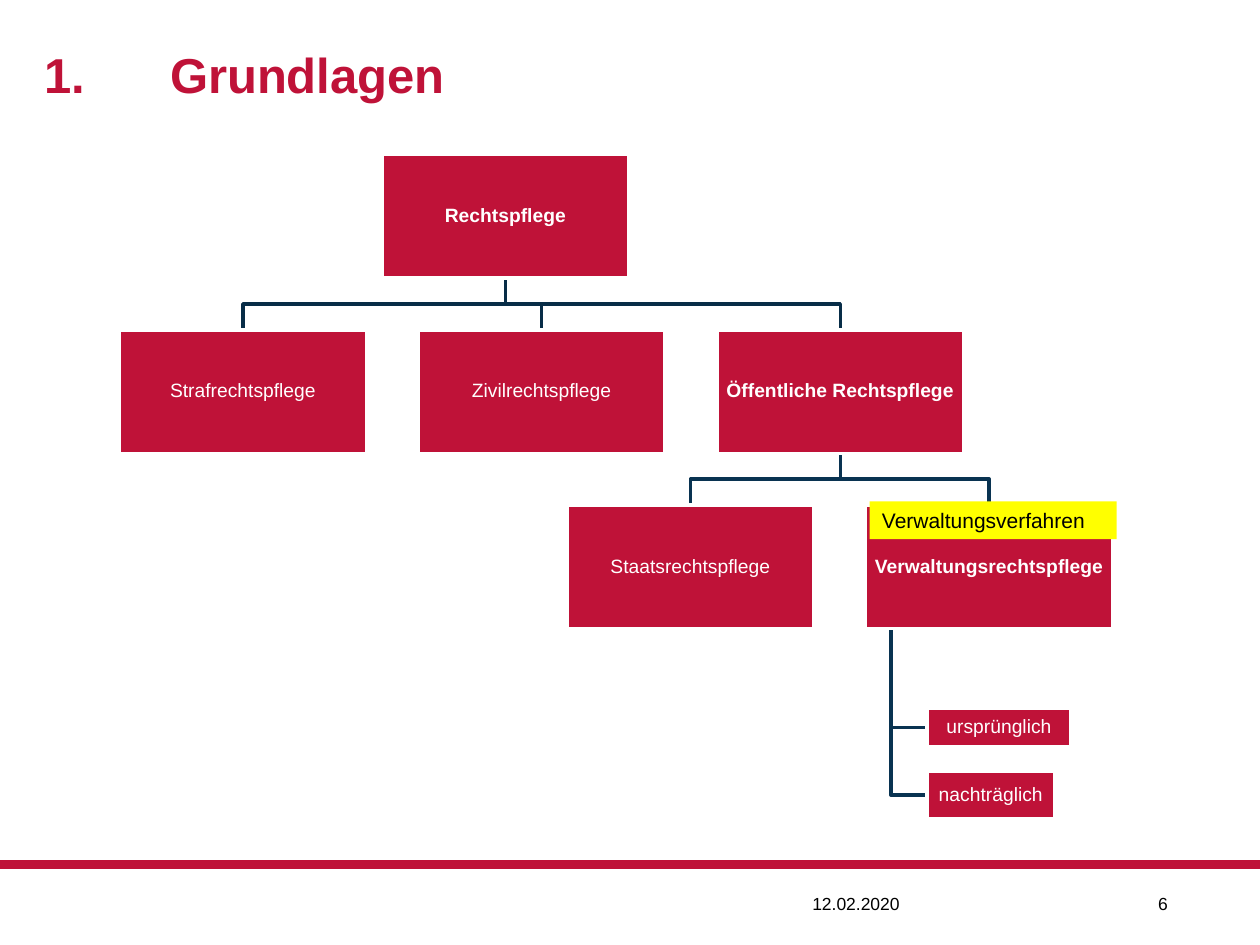
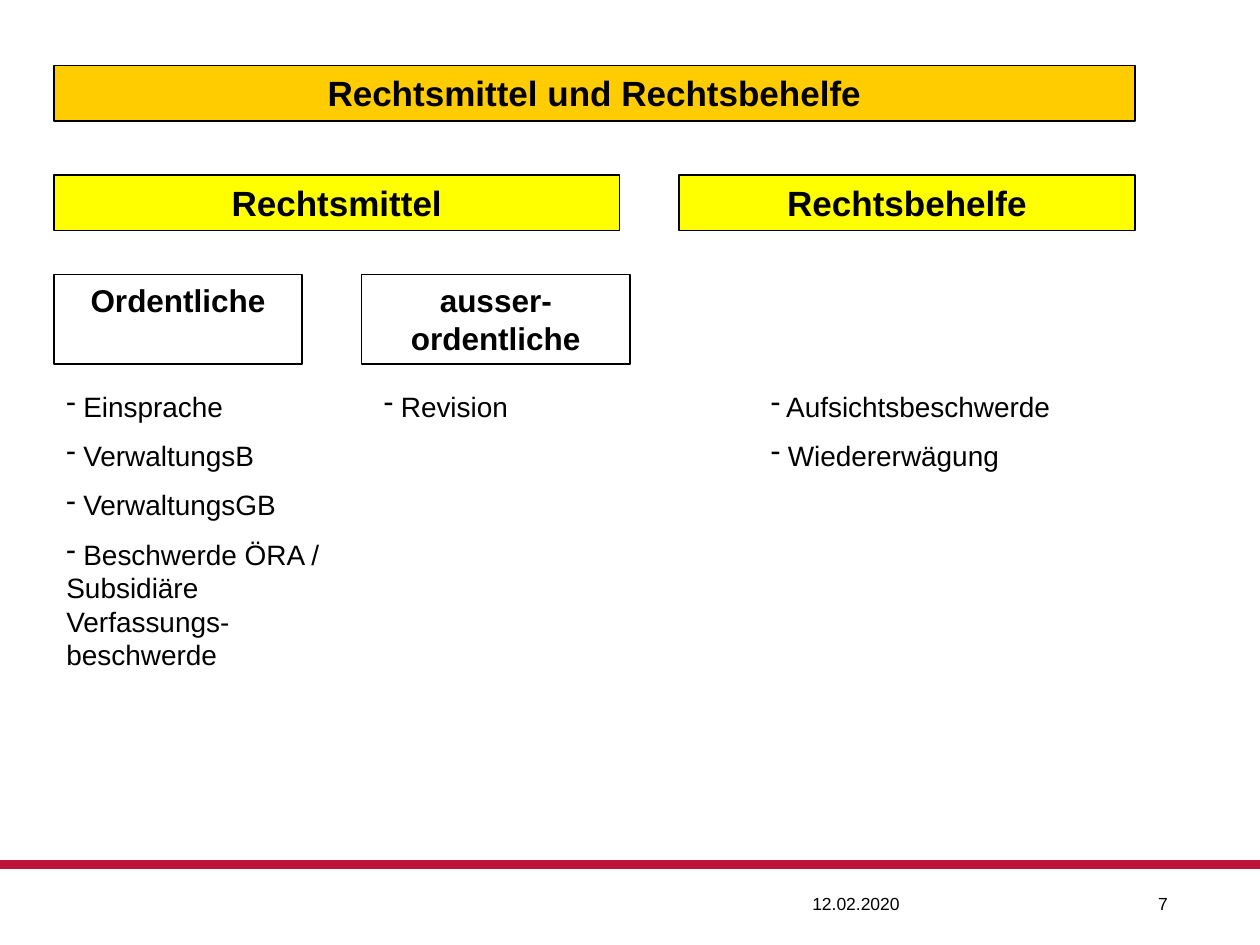
from lxml import etree
from pptx import Presentation
from pptx.dml.color import RGBColor
from pptx.enum.shapes import MSO_CONNECTOR, MSO_SHAPE
from pptx.enum.text import MSO_ANCHOR as ANCHOR, PP_ALIGN as ALIGN
from pptx.oxml.ns import qn
from pptx.util import Cm, Pt

FONT = "Arial"
RED, NAVY, DARK_NAVY = "BF1238", "093351", "082D47"
YELLOW, AMBER, WHITE, BLACK = "FFFF00", "FFCC00", "FFFFFF", "000000"
DATE = "12.02.2020"
SLIDE_W, SLIDE_H = 25.4, 19.05

# Tree grid
NODE_W, NODE_H = 4.98, 2.49
TREE_TOP, ROW_STEP, COL_STEP = 3.12, 3.53, 6.02
ROOT_X, AREAS_X, PUBLIC_X = 7.7, 2.41, 11.43
TRUNK_X, LEAF_X = 17.96, 18.69


def color(hex_code):
    return RGBColor.from_string(hex_code)


def add_run(p, text, size, hex_code=BLACK, bold=False):
    r = p.add_run()
    r.text = text
    r.font.name = FONT
    r.font.size = Pt(size)
    r.font.bold = bold
    r.font.color.rgb = color(hex_code)


def set_margins(tf, margin):
    tf.margin_left = tf.margin_right = Cm(margin)
    tf.margin_top = tf.margin_bottom = Cm(margin)


def add_box(s, x, y, w, h, fill, line=None, line_width=0.75):
    """Add a rectangle with top-anchored text and return it."""
    sp = s.shapes.add_shape(MSO_SHAPE.RECTANGLE, Cm(x), Cm(y), Cm(w), Cm(h))
    sp.shadow.inherit = False
    sp.fill.solid()
    sp.fill.fore_color.rgb = color(fill)
    if line:
        sp.line.color.rgb = color(line)
        sp.line.width = Pt(line_width)
    else:
        sp.line.fill.background()
    sp.text_frame.word_wrap = True
    sp.text_frame.vertical_anchor = ANCHOR.TOP
    return sp


def add_label(s, x, y, w, h, text, size, fill, line=None, bold=True, align=ALIGN.CENTER):
    p = add_box(s, x, y, w, h, fill, line).text_frame.paragraphs[0]
    p.alignment = align
    add_run(p, text, size, bold=bold)


def add_node(s, x, y, text, bold=False, w=NODE_W, h=NODE_H):
    tf = add_box(s, x, y, w, h, RED, WHITE, 2).text_frame
    set_margins(tf, 0.03)
    tf.vertical_anchor = ANCHOR.MIDDLE
    p = tf.paragraphs[0]
    p.alignment = ALIGN.CENTER
    p.line_spacing = 0.9
    add_run(p, text, 11, WHITE, bold)


def add_polyline(s, points, hex_code):
    start, *rest = [(Cm(x), Cm(y)) for x, y in points]
    builder = s.shapes.build_freeform(*start)
    builder.add_line_segments(rest, close=False)
    sp = builder.convert_to_shape()
    sp.shadow.inherit = False
    sp.fill.background()
    sp.line.color.rgb = color(hex_code)
    sp.line.width = Pt(2)


def add_branch(s, parent_x, child_x, parent_row, hex_code):
    """Link the bottom of a node to the top of a node one row below."""
    x1, x2 = parent_x + NODE_W / 2, child_x + NODE_W / 2
    top, bottom = row_y(parent_row) + NODE_H, row_y(parent_row + 1)
    middle = (top + bottom) / 2
    add_polyline(s, [(x1, top), (x1, middle), (x2, middle), (x2, bottom)], hex_code)


def row_y(row):
    return TREE_TOP + row * ROW_STEP


def add_dash_list(s, x, w, h, items):
    tf = add_box(s, x, 7.72, w, h, WHITE).text_frame
    for i, item in enumerate(items):
        p = tf.add_paragraph() if i else tf.paragraphs[0]
        p.alignment = ALIGN.LEFT
        if i:
            p.space_before = Pt(9)
        bullet = etree.SubElement(p._p.get_or_add_pPr(), qn("a:buChar"))
        bullet.set("char", "-")
        add_run(p, " " + item, 16)


def add_title(s, number, text):
    tf = s.shapes.add_textbox(Cm(0.64), Cm(0.48), Cm(23.5), Cm(2.01)).text_frame
    tf.word_wrap = True
    tf.vertical_anchor = ANCHOR.MIDDLE
    p = tf.paragraphs[0]
    tabs = etree.SubElement(p._p.get_or_add_pPr(), qn("a:tabLst"))
    etree.SubElement(tabs, qn("a:tab"), pos=str(Cm(2.54)), algn="l")
    add_run(p, f"{number}\t{text}", 28, RED, True)


def add_footer_text(s, x, w, text):
    tf = s.shapes.add_textbox(Cm(x), Cm(17.78), Cm(w), Cm(0.94)).text_frame
    tf.word_wrap = True
    tf.vertical_anchor = ANCHOR.MIDDLE
    set_margins(tf, 0)
    p = tf.paragraphs[0]
    p.alignment = ALIGN.CENTER
    p.line_spacing = Pt(9.6)
    add_run(p, text, 10)


def add_slide(prs, page):
    """Add a blank slide with the red rule, the date and the page number."""
    s = prs.slides.add_slide(prs.slide_layouts[6])
    y = Cm(17.42)
    rule = s.shapes.add_connector(MSO_CONNECTOR.STRAIGHT, 0, y, Cm(SLIDE_W), y)
    rule.line.color.rgb = color(RED)
    rule.line.width = Pt(5)
    etree.SubElement(rule._element.spPr, qn("a:effectLst"))
    add_footer_text(s, 15.82, 2.87, DATE)
    add_footer_text(s, 22.71, 1.47, str(page))
    return s


def build_tree_slide(prs):
    s = add_slide(prs, 6)
    add_title(s, "1.", "Grundlagen")

    areas = [("Strafrechtspflege", False), ("Zivilrechtspflege", False),
             ("Öffentliche Rechtspflege", True)]
    public = [("Staatsrechtspflege", False), ("Verwaltungsrechtspflege", True)]
    leaves = [("ursprünglich", 14.27, 2.9, 0.79), ("nachträglich", 15.54, 2.57, 0.97)]
    areas_x = [AREAS_X + i * COL_STEP for i in range(len(areas))]
    public_x = [PUBLIC_X + i * COL_STEP for i in range(len(public))]

    for _, y, _, h in leaves:
        middle = y + h / 2
        add_polyline(s, [(TRUNK_X, row_y(2) + NODE_H), (TRUNK_X, middle),
                         (LEAF_X, middle)], NAVY)
    for x in public_x:
        add_branch(s, areas_x[-1], x, 1, NAVY)
    for x in areas_x:
        add_branch(s, ROOT_X, x, 0, DARK_NAVY)

    add_node(s, ROOT_X, row_y(0), "Rechtspflege", True)
    for row, (columns, nodes) in enumerate([(areas_x, areas), (public_x, public)], 1):
        for x, (text, bold) in zip(columns, nodes):
            add_node(s, x, row_y(row), text, bold)
    for text, y, w, h in leaves:
        add_node(s, LEAF_X, y, text, w=w, h=h)
    add_label(s, 17.53, 10.11, 4.98, 0.76, "Verwaltungsverfahren", 12, YELLOW,
              bold=False, align=ALIGN.LEFT)


def build_remedies_slide(prs):
    s = add_slide(prs, 7)
    left = 1.09
    for x, y, w, text, fill in [
        (left, 1.32, 21.79, "Rechtsmittel und Rechtsbehelfe", AMBER),
        (left, 3.53, 11.4, "Rechtsmittel", YELLOW),
        (13.69, 3.53, 9.19, "Rechtsbehelfe", YELLOW),
    ]:
        add_label(s, x, y, w, 1.12, text, 20, fill, BLACK)
    for x, w, text in [(left, 5, "Ordentliche"), (7.29, 5.41, "ausser-ordentliche")]:
        add_label(s, x, 5.54, w, 1.8, text, 18, WHITE, BLACK)

    add_dash_list(s, left, 5.79, 6.07, [
        "Einsprache", "VerwaltungsB", "VerwaltungsGB",
        "Beschwerde ÖRA / Subsidiäre Verfassungs-beschwerde"])
    add_dash_list(s, 7.49, 5.79, 0.94, ["Revision"])
    add_dash_list(s, 15.29, 7.39, 1.96, ["Aufsichtsbeschwerde", "Wiedererwägung"])


def main():
    prs = Presentation()
    prs.slide_width, prs.slide_height = Cm(SLIDE_W), Cm(SLIDE_H)
    build_tree_slide(prs)
    build_remedies_slide(prs)
    prs.save("out.pptx")


if __name__ == "__main__":
    main()
